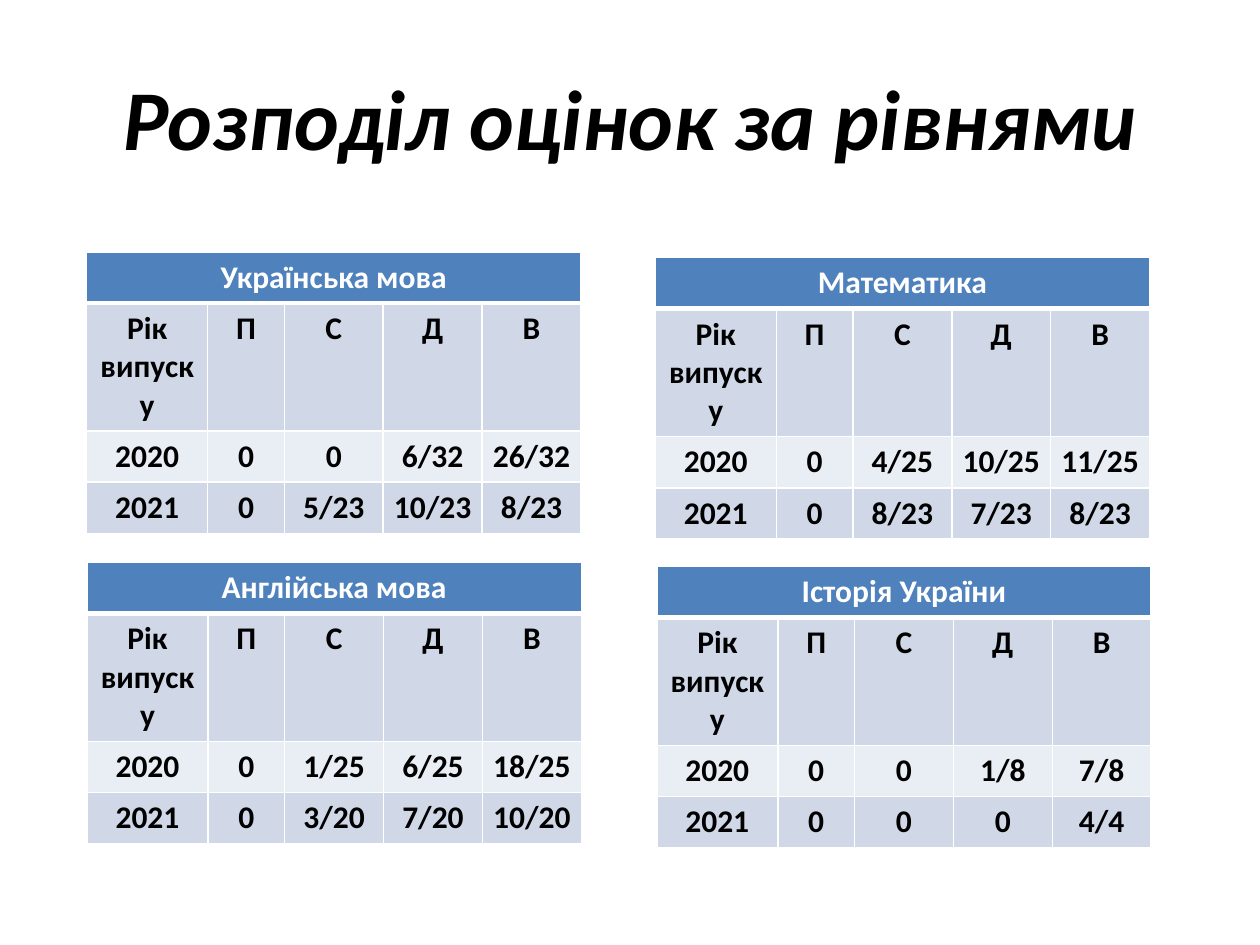
from lxml import etree
from pptx import Presentation
from pptx.dml.color import RGBColor
from pptx.enum import text
from pptx.oxml import ns
from pptx.util import Pt

COLORS = {"title": "000000", "header": "4F81BD", "band": "D0D8E8",
          "light": "E9EDF4", "white": "FFFFFF", "body": "000000"}
FONT = "Calibri"
COL_WIDTHS = [69.2, 43.8, 56.5, 56.5, 56.5]
ROW_HEIGHTS = [29.2, 73.1, 29.2, 29.2]
LEVELS = ["Рік випуску", "П", "С", "Д", "В"]

# Subject, left, top, results by year
SUBJECTS = [
    ("Українська мова", 49.5, 144,
     [["2020", "0", "0", "6/32", "26/32"], ["2021", "0", "5/23", "10/23", "8/23"]]),
    ("Англійська мова", 49.7, 321.3,
     [["2020", "0", "1/25", "6/25", "18/25"], ["2021", "0", "3/20", "7/20", "10/20"]]),
    ("Математика", 374.4, 147.2,
     [["2020", "0", "4/25", "10/25", "11/25"], ["2021", "0", "8/23", "7/23", "8/23"]]),
    ("Історія України", 375.3, 323.6,
     [["2020", "0", "0", "1/8", "7/8"], ["2021", "0", "0", "0", "4/4"]]),
]


def write(tf, content, size=18, color="body", bold=True, italic=False):
    p = tf.paragraphs[0]
    p.alignment = text.PP_ALIGN.CENTER
    r = p.add_run()
    r.text = content
    f = r.font
    f.name, f.size, f.bold, f.italic = FONT, Pt(size), bold, italic
    f.color.rgb = RGBColor.from_string(COLORS[color])


def set_borders(cell, bottom=1):
    tcPr = cell._tc.get_or_add_tcPr()
    for i, (side, width) in enumerate([("L", 1), ("R", 1), ("T", 1), ("B", bottom)]):
        ln = etree.Element(ns.qn(f"a:ln{side}"), w=str(Pt(width)))
        fill = etree.SubElement(ln, ns.qn("a:solidFill"))
        etree.SubElement(fill, ns.qn("a:srgbClr"), val=COLORS["white"])
        tcPr.insert(i, ln)


def add_title(s, content, left, top, width, height):
    sp = s.shapes.title
    sp.left, sp.top, sp.width, sp.height = Pt(left), Pt(top), Pt(width), Pt(height)
    tf = sp.text_frame
    tf.auto_size = text.MSO_AUTO_SIZE.NONE
    tf.vertical_anchor = text.MSO_ANCHOR.MIDDLE
    write(tf, content, size=48.6, color="title", italic=True)


def add_grades(s, subject, left, top, results):
    rows = [[subject], LEVELS, *results]
    table = s.shapes.add_table(len(rows), len(LEVELS), Pt(left), Pt(top),
                               Pt(sum(COL_WIDTHS)), Pt(sum(ROW_HEIGHTS))).table
    for col, width in zip(table.columns, COL_WIDTHS):
        col.width = Pt(width)
    for row, height in zip(table.rows, ROW_HEIGHTS):
        row.height = Pt(height)
    table.cell(0, 0).merge(table.cell(0, len(LEVELS) - 1))

    fills = ["header", "band", "light", "band"]
    for i, (row, values) in enumerate(zip(table.rows, rows)):
        for cell in row.cells:
            cell.margin_left = cell.margin_right = Pt(5)
            cell.margin_top = cell.margin_bottom = Pt(3.6)
            cell.fill.solid()
            cell.fill.fore_color.rgb = RGBColor.from_string(COLORS[fills[i]])
            set_borders(cell, bottom=1 if i else 3)
        for cell, value in zip(row.cells, values):
            write(cell.text_frame, value, color="body" if i else "white")


def main():
    prs = Presentation()
    prs.slide_width, prs.slide_height = Pt(720), Pt(540)
    s = prs.slides.add_slide(prs.slide_layouts[5])
    # Heading
    add_title(s, "Розподіл оцінок за рівнями", 36, 21.6, 648, 90)
    # One table for each subject
    for subject in SUBJECTS:
        add_grades(s, *subject)
    prs.save("out.pptx")


if __name__ == "__main__":
    main()
